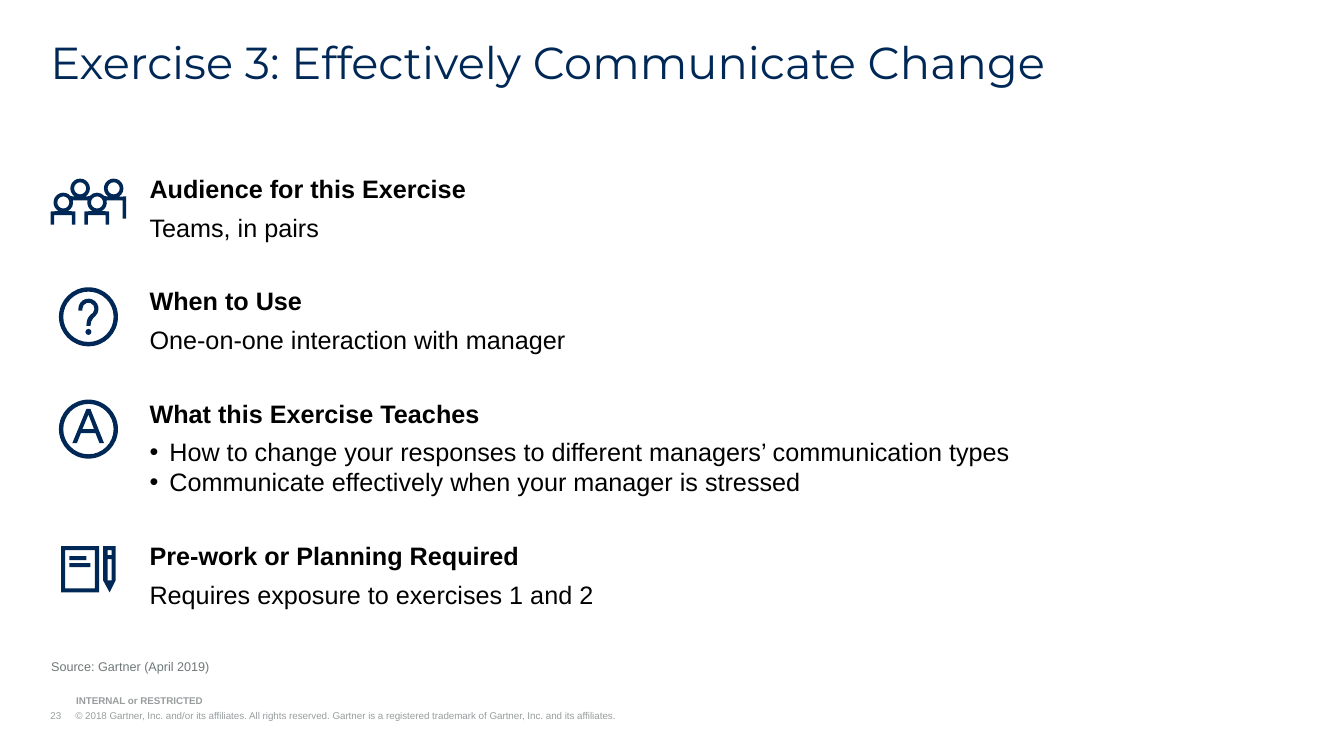
from dataclasses import dataclass
from math import ceil, cos, radians, sin, tan

from lxml.etree import SubElement
from pptx import Presentation
from pptx.dml.color import RGBColor as RGB
from pptx.enum.text import MSO_ANCHOR as ANCHOR
from pptx.oxml.ns import qn
from pptx.util import Cm, Pt


@dataclass(frozen=True)
class Theme:
    navy: RGB = RGB(0x00, 0x28, 0x56)
    black: RGB = RGB(0, 0, 0)
    source_grey: RGB = RGB(0x6F, 0x78, 0x78)
    footer_grey: RGB = RGB(0x97, 0x9D, 0x9D)
    head_font: str = "Montserrat"
    body_font: str = "Arial"
    title_size: int = 32
    body_size: int = 18
    source_size: int = 9
    footer_size: int = 7


THEME = Theme()
ICON_UNIT = Cm(0.0254)
ICON_W = Cm(1.92)
FINE = 100  # freeform steps per icon unit


def arc(cx, cy, r, start, end):
    """A start point, then Bezier triples; degrees, clockwise on the slide."""
    pieces = ceil(abs(end - start) / 90)
    step = radians(end - start) / pieces
    k = 4 / 3 * tan(step / 4)

    def at(a, pull=0):
        return (cx + r * (cos(a) - pull * sin(a)), cy + r * (sin(a) + pull * cos(a)))

    angles = [radians(start) + step * i for i in range(pieces)]
    return [at(angles[0])] + [(at(a, k), at(a + step, -k), at(a + step)) for a in angles]


def circle(cx, cy, r):
    return arc(cx, cy, r, 0, 360)


def rect(x1, y1, x2, y2):
    return [(x1, y1), (x2, y1), (x2, y2), (x1, y2)]


def ring():
    return [circle(30, 30, 29.3), circle(30, 30, 25)]


def team_icon():
    r, back, front = 9.7, [(63, 11), (29.7, 11)], [(13, 25), (46.5, 25)]

    def desk(x):
        return [(x, 34), (x, 47), (x + 3.5, 47), (x + 3.5, 37.5),
                (x + 21, 37.5), (x + 21, 47), (x + 24.5, 47), (x + 24.5, 34)]

    outline = (arc(*back[0], r, 58, -238) + arc(*front[1], r, -41, -139)
               + arc(*back[1], r, 58, -238) + arc(*front[0], r, -41, -241)
               + desk(0.5) + arc(*front[0], r, 61, -13)
               + arc(*front[1], r, 193, 119) + desk(34) + arc(*front[1], r, 61, -13)
               + [(72, 23), (72, 41), (75.4, 41), (75.4, 19)])
    return [outline] + [circle(*head, 6) for head in back + front]


def question_icon():
    hook = (arc(30, 22, 10, 180, 405) + [(35, 31), ((33, 33), (32, 36), (32, 39))]
            + [(28, 39), ((28, 34), (29, 31), (32, 28))]
            + arc(30, 22, 6, 40, -180) + [(24, 24), (20, 24)])
    return ring() + [hook, circle(30, 45, 3)]


def letter_icon():
    letter = [(28, 10), (14, 44), (18.5, 44), (22.5, 34),
              (37, 34), (41, 44), (45.5, 44), (32, 10)]
    return ring() + [letter, [(24, 30), (30, 15.5), (35.5, 30)]]


def notes_icon():
    pencil = [(55, 1), (55, 35), (49, 47), (42.5, 35), (42.5, 1)]
    return [rect(1, 1, 38.5, 47), rect(5, 5, 34.5, 43),
            rect(9, 11, 26, 15), rect(9, 18, 30, 22),
            pencil, rect(47, 5, 51, 10), rect(47, 14, 51, 35)]


def bend(s, curve_starts):
    """Merge three straight segments into one Bezier at each given index."""
    lines = list(s._element.iter(qn("a:lnTo")))
    for i in curve_starts:
        first = lines[i]
        for follower in lines[i + 1:i + 3]:
            first.append(follower[0])
            first.getparent().remove(follower)
        first.tag = qn("a:cubicBezTo")


def add_icon(slide, contours, left, top):
    """Draw nested contours as one shape, centred across the icon column."""
    builder, curve_starts, count = None, [], 0
    for start, *segments in contours:
        x, y = (v * FINE for v in start)
        if builder is None:
            builder = slide.shapes.build_freeform(x, y, scale=ICON_UNIT / FINE)
        else:
            builder.move_to(x, y)
        points = []
        for segment in segments:
            curved = isinstance(segment[0], tuple)
            if curved:
                curve_starts.append(count + len(points))
            points += segment if curved else [segment]
        builder.add_line_segments([(px * FINE, py * FINE) for px, py in points])
        count += len(points)
    s = builder.convert_to_shape()
    bend(s, curve_starts)
    s.left, s.top = left + (ICON_W - s.width) // 2, top
    s.shadow.inherit = False
    s.fill.solid()
    s.fill.fore_color.rgb = THEME.navy
    s.line.fill.background()


def add_box(slide, left, top, width, height, anchor=ANCHOR.TOP, inset=True):
    tf = slide.shapes.add_textbox(left, top, width, height).text_frame
    tf.word_wrap = True
    tf.vertical_anchor = anchor
    if not inset:
        for side in ("left", "top", "right", "bottom"):
            setattr(tf, f"margin_{side}", 0)
    return tf


def write(p, text, color, **font):
    r = p.add_run()
    r.text = text
    for name, value in {"name": THEME.body_font, **font}.items():
        setattr(r.font, name, value)
    r.font.color.rgb = color


def hang(p, indent, bullet=None):
    """Give a paragraph a hanging indent, with a bullet or a tab stop."""
    pPr = p._p.get_or_add_pPr()
    pPr.set("marL", str(indent))
    pPr.set("indent", str(-indent))
    if bullet:
        SubElement(pPr, qn("a:buFont"), typeface=THEME.body_font)
        SubElement(pPr, qn("a:buChar"), char=bullet)
    else:
        tabs = SubElement(pPr, qn("a:tabLst"))
        SubElement(tabs, qn("a:tab"), pos=str(indent), algn="l")


def add_title(slide, left, top, width, height):
    p = add_box(slide, left, top, width, height, inset=False).paragraphs[0]
    p.line_spacing = 0.9
    p.space_after = Pt(12)
    write(p, "Exercise 3: Effectively Communicate Change", THEME.navy,
          name=THEME.head_font, size=Pt(THEME.title_size))


def add_section(slide, left, top, height, icon, icon_drop, heading, lines):
    add_icon(slide, icon, left, top + icon_drop)
    tf = add_box(slide, left + Cm(2.25), top, Cm(24.1), height)
    size = Pt(THEME.body_size)
    p = tf.paragraphs[0]
    p.space_after = Pt(6)
    write(p, heading, THEME.black, size=size, bold=True)
    for line in lines:
        p = tf.add_paragraph()
        if len(lines) > 1:
            hang(p, Cm(0.5), "•")
        write(p, line, THEME.black, size=size, bold=False)


def add_sections(slide, left, top):
    """Stack the sections; each further line makes a section taller."""
    sections = [
        (team_icon(), Cm(0.26), "Audience for this Exercise", ["Teams, in pairs"]),
        (question_icon(), Cm(0.17), "When to Use",
         ["One-on-one interaction with manager"]),
        (letter_icon(), Cm(0.17), "What this Exercise Teaches",
         ["How to change your responses to different managers’ communication types",
          "Communicate effectively when your manager is stressed"]),
        (notes_icon(), Cm(0.26), "Pre-work or Planning Required",
         ["Requires exposure to exercises 1 and 2"]),
    ]
    for icon, drop, heading, lines in sections:
        height = Cm(1.24 + 0.77 * len(lines))
        add_section(slide, left, top, height, icon, drop, heading, lines)
        top += height + Cm(0.82)


def add_source(slide, left, top, width, height):
    p = add_box(slide, left, top, width, height).paragraphs[0]
    write(p, "Source: Gartner (April 2019)", THEME.source_grey,
          size=Pt(THEME.source_size))


def add_footer(slide, left, top):
    notice = ("23\t© 2018 Gartner, Inc. and/or its affiliates. All rights reserved. "
              "Gartner is a registered trademark of Gartner, Inc. and its affiliates.")
    for x, y, width, text, bold in [
            (left, top + Cm(0.38), Cm(20.3), notice, False),
            (left + Cm(0.65), top, Cm(6.43), "INTERNAL or RESTRICTED", True)]:
        p = add_box(slide, x, y, width, Cm(0.3), ANCHOR.BOTTOM, False).paragraphs[0]
        hang(p, Cm(0.63))
        write(p, text, THEME.footer_grey, size=Pt(THEME.footer_size), bold=bold)


def main():
    prs = Presentation()
    prs.slide_width, prs.slide_height = Cm(33.87), Cm(19.05)
    slide = prs.slides.add_slide(prs.slide_layouts[6])
    margin = Cm(1.27)
    add_footer(slide, margin, Cm(17.5))
    add_title(slide, margin, Cm(1.02), Cm(31.33), Cm(1.22))
    add_sections(slide, margin, Cm(4.24))
    add_source(slide, Cm(1.04), Cm(16.48), Cm(25.78), Cm(0.64))
    prs.save("out.pptx")


if __name__ == "__main__":
    main()
